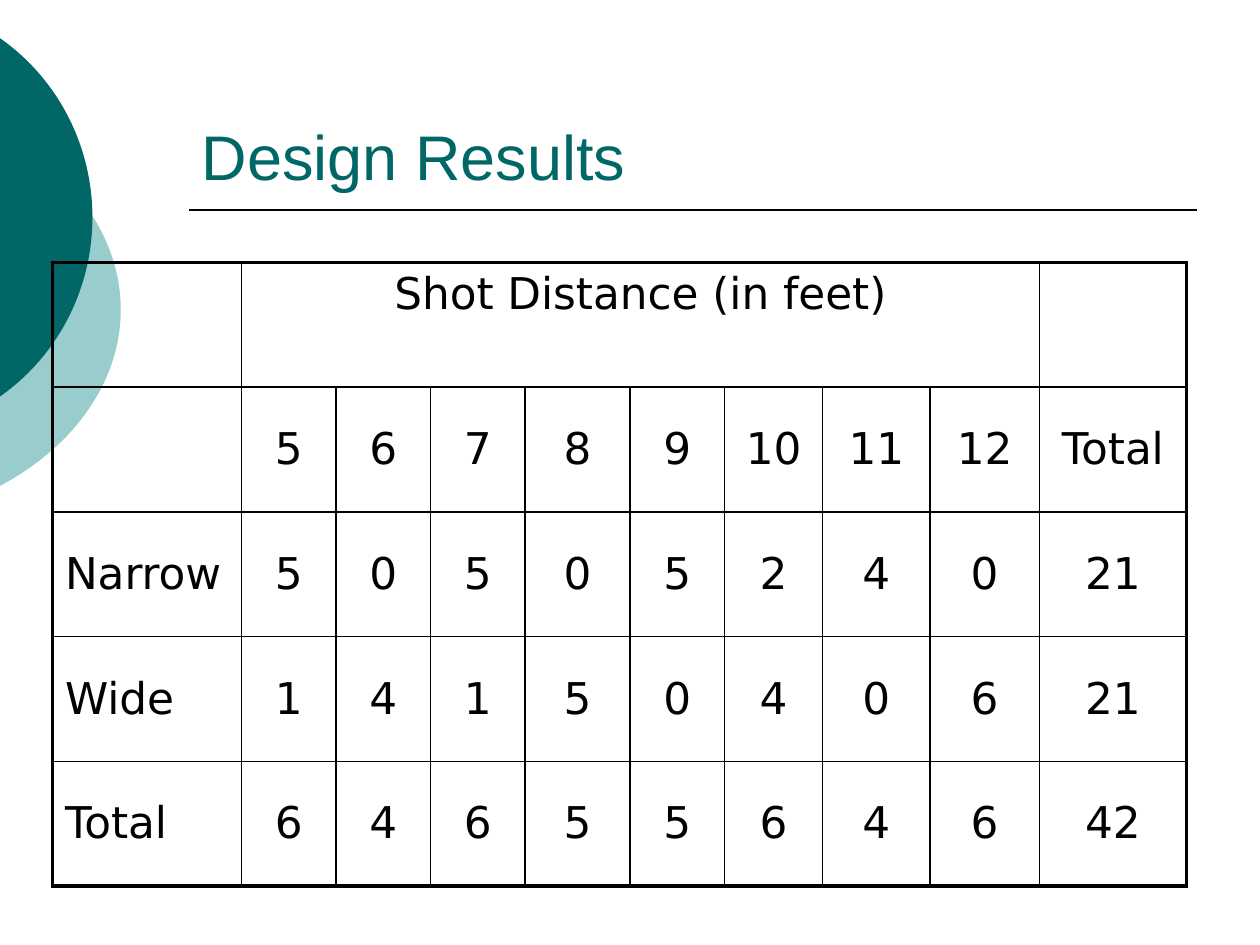
from dataclasses import dataclass
from itertools import accumulate
from math import acos, cos, sin, tan

from lxml.etree import SubElement
from pptx import Presentation
from pptx.dml.color import RGBColor as Rgb
from pptx.enum.shapes import MSO_CONNECTOR as Connector
from pptx.enum.text import MSO_ANCHOR as Anchor, MSO_AUTO_SIZE as AutoSize, PP_ALIGN as Align
from pptx.oxml.ns import qn
from pptx.util import Inches, Pt


@dataclass(frozen=True)
class Theme:
    teal: str = "006666"
    pale_teal: str = "99CCCC"
    ink: str = "000000"
    title_font: str = "Arial"
    table_font: str = "DejaVu Sans"
    title_size: float = 36
    table_size: float = 25
    thin: float = 1
    thick: float = 2.25


THEME = Theme()
GRID_COLUMNS, GRID_ROWS = 120, 90
UNIT = Inches(10) / GRID_COLUMNS

TITLE_BOX = (18, 4, 96, 15)
RULE_BOX = (18, 20, 96, 0)
RESULTS_BOX = (5, 25, 108, 59.4)
DISC_BOXES = [
    ((-42.5, 9, 54, 41), THEME.pale_teal),
    ((-31.8, 0, 40.6, 41.4), THEME.teal),
]
COLUMN_SHARES = [18, 9, 9, 9, 10, 9, 9.36, 10.2, 10.44, 14]
HEADING = "Shot Distance (in feet)"
RESULTS = [
    ["", HEADING] + [""] * 8,
    ["", "5", "6", "7", "8", "9", "10", "11", "12", "Total"],
    ["Narrow", "5", "0", "5", "0", "5", "2", "4", "0", "21"],
    ["Wide", "1", "4", "1", "5", "0", "4", "0", "6", "21"],
    ["Total", "6", "4", "6", "5", "5", "6", "4", "6", "42"],
]


def units(*amounts):
    return [round(amount * UNIT) for amount in amounts]


def apply(target, formats):
    for attribute, value in formats.items():
        setattr(target, attribute, value)


def style_font(font, name, size, color):
    apply(font, {"name": name, "size": Pt(size)})
    font.color.rgb = Rgb.from_string(color)


def add_disc(slide, box, color):
    left, top, width, height = box
    right, bottom = left + width, top + height
    builder = slide.shapes.build_freeform(*units(left, top))
    corners = [(right, top), (right, bottom), (left, bottom)]
    builder.add_line_segments([units(*corner) for corner in corners], close=True)
    disc = builder.convert_to_shape()
    disc.shadow.inherit = False
    disc.fill.solid()
    disc.fill.fore_color.rgb = Rgb.from_string(color)
    disc.line.fill.background()

    outline = disc._element.spPr.find(".//" + qn("a:path"))
    for segment in list(outline):
        outline.remove(segment)
    sweep = acos((-left - width / 2) / (width / 2))
    reach = 4 / 3 * tan(sweep / 4)

    def on_arc(angle, pull=0):
        return units(width / 2 * (1 + cos(angle) - pull * sin(angle)),
                     height / 2 * (1 + sin(angle) + pull * cos(angle)))

    def add_segment(tag, *points):
        segment = SubElement(outline, qn(tag))
        for x, y in points:
            SubElement(segment, qn("a:pt"), x=str(x), y=str(y))

    add_segment("a:moveTo", on_arc(-sweep))
    for start, end in ((-sweep, 0), (0, sweep)):
        add_segment("a:cubicBezTo", on_arc(start, reach), on_arc(end, -reach), on_arc(end))
    add_segment("a:close")


def add_rule(slide, box):
    left, top, width, height = box
    rule = slide.shapes.add_connector(
        Connector.STRAIGHT, *units(left, top, left + width, top + height))
    rule.line.width = Pt(THEME.thin)
    rule.line.color.rgb = Rgb.from_string(THEME.ink)
    SubElement(rule._element.spPr, qn("a:effectLst"))


def place_title(slide, box, wording):
    title = slide.shapes.title
    apply(title, dict(zip(("left", "top", "width", "height"), units(*box))))
    frame = title.text_frame
    frame.text = wording
    apply(frame, {"vertical_anchor": Anchor.BOTTOM, "word_wrap": True,
                  "auto_size": AutoSize.NONE})
    heading = frame.paragraphs[0]
    heading.alignment = Align.LEFT
    style_font(heading.runs[0].font, THEME.title_font, THEME.title_size, THEME.teal)


def draw_borders(cell, widths):
    properties = cell._tc.get_or_add_tcPr()
    for side, width in widths.items():
        border = SubElement(properties, qn(f"a:ln{side}"), w=str(Pt(width)))
        fill = SubElement(border, qn("a:solidFill"))
        SubElement(fill, qn("a:srgbClr"), val=THEME.ink)


def fill_cell(cell, wording, alignment, anchor):
    cell.fill.background()
    cell.vertical_anchor = anchor
    if not wording:
        return
    cell.text = wording
    entry = cell.text_frame.paragraphs[0]
    entry.alignment = alignment
    spacing = SubElement(entry._p.get_or_add_pPr(), qn("a:spcBef"))
    SubElement(spacing, qn("a:spcPct"), val="20000")
    style_font(entry.runs[0].font, THEME.table_font, THEME.table_size, THEME.ink)


def add_results(slide, box, results):
    row_count, column_count = len(results), len(COLUMN_SHARES)
    table = slide.shapes.add_table(row_count, column_count, *units(*box)).table
    apply(table, {"first_row": False, "horz_banding": False})
    width, height = box[2:]
    share = width / sum(COLUMN_SHARES)
    edges = units(*accumulate((s * share for s in COLUMN_SHARES), initial=0))
    for column, start, end in zip(table.columns, edges, edges[1:]):
        column.width = end - start
    for row in table.rows:
        row.height = units(height / row_count)[0]
    table.cell(0, 1).merge(table.cell(0, column_count - 2))

    for r, entries in enumerate(results):
        for c, wording in enumerate(entries):
            outer = {"L": c == 0, "R": c == column_count - 1,
                     "T": r == 0, "B": r == row_count - 1}
            cell = table.cell(r, c)
            draw_borders(cell, {side: THEME.thick if edge else THEME.thin
                                for side, edge in outer.items()})
            fill_cell(cell, wording, Align.LEFT if c == 0 else Align.CENTER,
                      Anchor.TOP if r == 0 else Anchor.MIDDLE)


def main():
    deck = Presentation()
    apply(deck, dict(zip(("slide_width", "slide_height"), units(GRID_COLUMNS, GRID_ROWS))))
    slide = deck.slides.add_slide(deck.slide_layouts[5])
    for box, color in DISC_BOXES:
        add_disc(slide, box, color)
    add_rule(slide, RULE_BOX)
    place_title(slide, TITLE_BOX, "Design Results")
    add_results(slide, RESULTS_BOX, RESULTS)
    deck.save("out.pptx")


if __name__ == "__main__":
    main()
